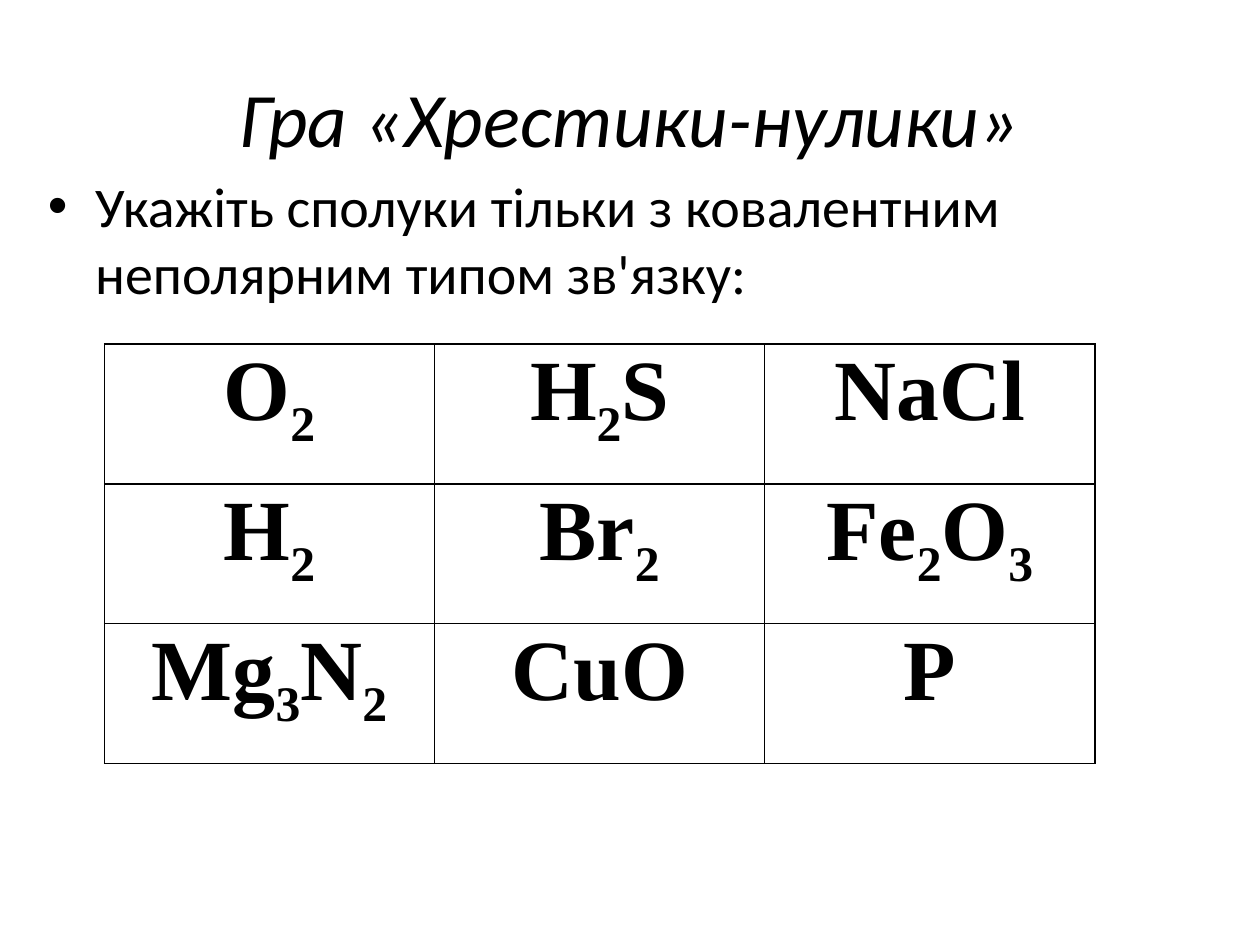
import itertools

import pptx
import pptx.dml.color
import pptx.enum.text
import pptx.oxml
import pptx.oxml.ns
import pptx.util
from pptx.util import Inches

BLACK = pptx.dml.color.RGBColor(0, 0, 0)
FORMULAS = [
    ["О2", "H2S", "NaCl"],
    ["H2", "Br2", "Fe2O3"],
    ["Mg3N2", "CuO", "P"],
]


def style(p, font, size):
    p.font.name = font
    p.font.size = pptx.util.Pt(size)
    p.font.color.rgb = BLACK


def add_borders(cell):
    tc_pr = cell._tc.get_or_add_tcPr()
    for i, side in enumerate("LRTB"):
        tc_pr.insert(i, pptx.oxml.parse_xml(
            f'<a:ln{side} {pptx.oxml.ns.nsdecls("a")} w="12700"><a:solidFill>'
            f'<a:srgbClr val="{BLACK}"/></a:solidFill></a:ln{side}>'))


prs = pptx.Presentation()
prs.slide_width, prs.slide_height = Inches(10), Inches(7.5)
s = prs.slides.add_slide(prs.slide_layouts[1])

title = s.shapes.title
title.left, title.top = Inches(0.5), Inches(0.3)
title.width, title.height = Inches(9), Inches(1.25)
title.text_frame.text = "Гра «Хрестики-нулики»"
p = title.text_frame.paragraphs[0]
p.alignment = pptx.enum.text.PP_ALIGN.CENTER
style(p, "Calibri", 44)
p.font.italic = True

body = s.placeholders[1]
body.left, body.top = Inches(0.28), Inches(1.31)
body.width, body.height = Inches(9.72), Inches(4.95)
body.text_frame.text = "Укажіть сполуки тільки з ковалентним неполярним типом зв'язку:"
p = body.text_frame.paragraphs[0]
p.space_before = pptx.util.Pt(0)
style(p, "Calibri", 32)

col_width, row_height = Inches(2.62), Inches(1.11)
table = s.shapes.add_table(3, 3, Inches(0.83), Inches(2.73),
                           3 * col_width, 3 * row_height).table
table.first_row = table.horz_banding = False
for col in table.columns:
    col.width = col_width
for row, formulas in zip(table.rows, FORMULAS):
    row.height = row_height
    for cell, formula in zip(row.cells, formulas):
        cell.fill.background()
        add_borders(cell)
        cell.margin_left = cell.margin_right = Inches(0.06)
        cell.margin_top = cell.margin_bottom = 0
        p = cell.text_frame.paragraphs[0]
        p.alignment = pptx.enum.text.PP_ALIGN.CENTER
        style(p, "Times New Roman", 49)
        p.font.bold = True
        # Digits in a formula are subscripts
        for is_digit, chars in itertools.groupby(formula, str.isdigit):
            r = p.add_run()
            r.text = "".join(chars)
            if is_digit:
                r._r.get_or_add_rPr().set("baseline", "-25000")

prs.save("out.pptx")
